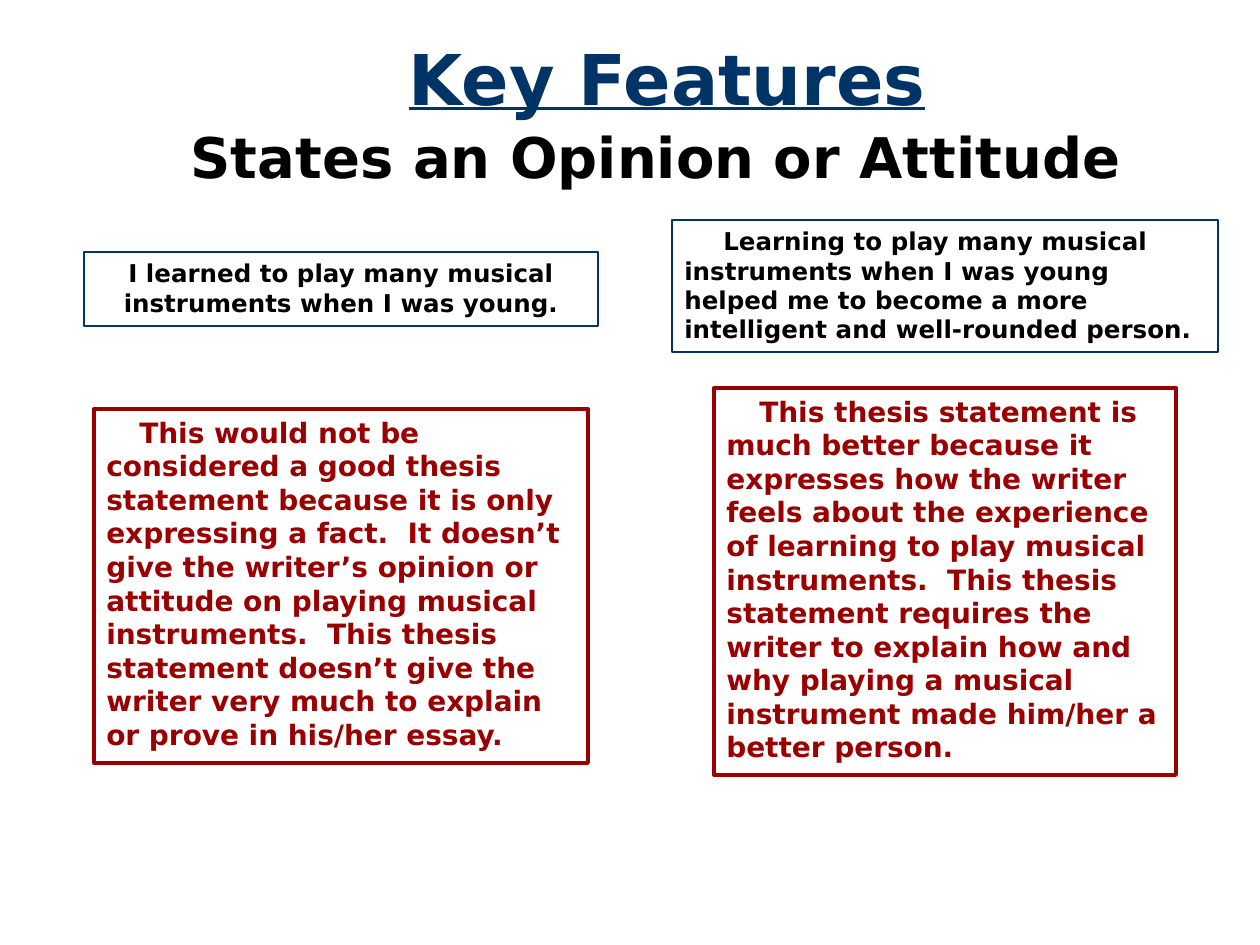
from dataclasses import dataclass

from pptx import Presentation
from pptx.dml.color import RGBColor
from pptx.enum.shapes import MSO_SHAPE
from pptx.enum.text import MSO_ANCHOR, PP_ALIGN
from pptx.util import Emu, Pt

RECTANGLE = MSO_SHAPE.RECTANGLE
TOP, BOTTOM = MSO_ANCHOR.TOP, MSO_ANCHOR.BOTTOM
LEFT, CENTER = PP_ALIGN.LEFT, PP_ALIGN.CENTER
PX = 914400 // 126


@dataclass(frozen=True)
class Theme:
    font: str = "DejaVu Sans"
    navy: str = "003366"
    red: str = "9A0000"
    black: str = "000000"
    white: str = "FFFFFF"
    title: int = 40
    subtitle: int = 32
    example: int = 14
    comment: int = 16
    example_line: float = 1.5
    comment_line: float = 2.25


THEME = Theme()

# Content: wording and place (left, top, width, height in px)
TITLE = ("Key Features", (84, 29, 1166, 97))
SUBTITLE = ("States an Opinion or Attitude", (73, 116, 1166, 79))

# Examples: wording, place, alignment, first-line indent in px
EXAMPLES = [
    ("I learned to play many musical instruments when I was young.",
     (84, 252, 514, 74), CENTER, 0),
    ("Learning to play many musical instruments when I was young helped me "
     "to become a more intelligent and well-rounded person.",
     (672, 220, 546, 132), LEFT, 39),
]

# Comments: wording, place
COMMENT_INDENT = 33
COMMENTS = [
    ("This would not be considered a good thesis statement because it is only "
     "expressing a fact.  It doesn’t give the writer’s opinion or attitude on "
     "playing musical instruments.  This thesis statement doesn’t give the "
     "writer very much to explain or prove in his/her essay.",
     (94, 409, 494, 354)),
    ("This thesis statement is much better because it expresses how the writer "
     "feels about the experience of learning to play musical instruments.  "
     "This thesis statement requires the writer to explain how and why playing "
     "a musical instrument made him/her a better person.",
     (714, 388, 462, 387)),
]


def emu(place):
    return [Emu(length * PX) for length in place]


def write(shape, wording, size, color, align=CENTER, anchor=TOP,
          indent=0, underline=False):
    frame = shape.text_frame
    frame.word_wrap = True
    frame.vertical_anchor = anchor
    paragraph = frame.paragraphs[0]
    paragraph.alignment = align
    if indent:
        properties = paragraph._p.get_or_add_pPr()
        properties.set("marL", "0")
        properties.set("indent", str(indent * PX))
    run = paragraph.add_run()
    run.text = wording
    run.font.name = THEME.font
    run.font.size = Pt(size)
    run.font.bold = True
    run.font.underline = underline
    run.font.color.rgb = RGBColor.from_string(color)


def add_heading(slide, heading, size, color, **style):
    wording, place = heading
    write(slide.shapes.add_textbox(*emu(place)), wording, size, color, **style)


def add_panel(slide, place, line_color, line_width):
    panel = slide.shapes.add_shape(RECTANGLE, *emu(place))
    panel.shadow.inherit = False
    panel.fill.solid()
    panel.fill.fore_color.rgb = RGBColor.from_string(THEME.white)
    panel.line.color.rgb = RGBColor.from_string(line_color)
    panel.line.width = Pt(line_width)
    return panel


def main():
    deck = Presentation()
    deck.slide_width, deck.slide_height = emu((1260, 945))
    slide = deck.slides.add_slide(deck.slide_layouts[6])

    # Headings
    add_heading(slide, TITLE, THEME.title, THEME.navy,
                anchor=BOTTOM, underline=True)
    add_heading(slide, SUBTITLE, THEME.subtitle, THEME.black)

    # Example thesis statements
    for wording, place, align, indent in EXAMPLES:
        panel = add_panel(slide, place, THEME.navy, THEME.example_line)
        write(panel, wording, THEME.example, THEME.black, align, indent=indent)

    # Comments on each example
    for wording, place in COMMENTS:
        panel = add_panel(slide, place, THEME.red, THEME.comment_line)
        write(panel, wording, THEME.comment, THEME.red, LEFT,
              indent=COMMENT_INDENT)

    deck.save("out.pptx")


if __name__ == "__main__":
    main()
